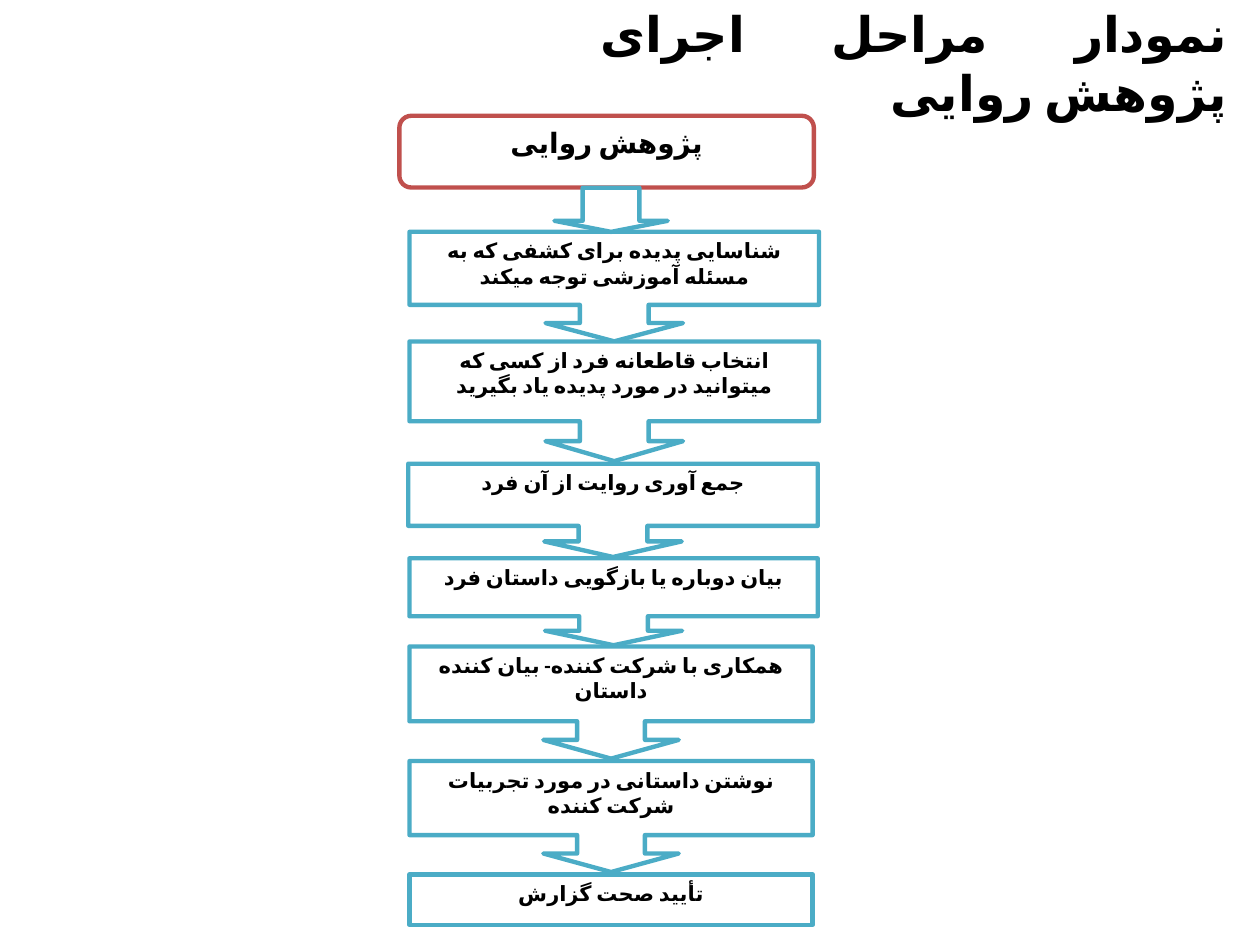
from dataclasses import dataclass

from pptx import Presentation
from pptx.dml.color import RGBColor
from pptx.enum.shapes import MSO_SHAPE
from pptx.enum.text import MSO_ANCHOR, MSO_AUTO_SIZE, PP_ALIGN
from pptx.oxml.ns import qn
from pptx.util import Pt
from lxml.etree import SubElement


@dataclass(frozen=True)
class Theme:
    ink: RGBColor = RGBColor(0, 0, 0)
    paper: RGBColor = RGBColor(255, 255, 255)
    red: RGBColor = RGBColor(0xC0, 0x50, 0x4D)
    blue: RGBColor = RGBColor(0x4B, 0xAC, 0xC6)
    serif: str = "Times New Roman"
    sans: str = "Calibri"
    title: float = 28
    head: float = 16
    body: float = 12
    line: float = 2.5
    after: float = 10


THEME = Theme()


@dataclass(frozen=True)
class Box:
    left: float
    top: float
    width: float
    height: float


@dataclass(frozen=True)
class Step:
    text: str
    box: Box
    font: str = THEME.serif
    rtl: bool = False


STEPS = [
    Step("شناسایی پدیده برای کشفی که به مسئله آموزشی توجه میکند",
         Box(234, 132.5, 234, 62.6), rtl=True),
    Step("انتخاب قاطعانه فرد از کسی که میتوانید در مورد پدیده یاد بگیرید",
         Box(234, 195.1, 234, 68.4)),
    Step("جمع آوری روایت از آن فرد",
         Box(233.3, 265, 234, 53.3), font=THEME.sans),
    Step("بیان دوباره یا بازگویی داستان فرد",
         Box(234, 319, 233.3, 49.7)),
    Step("همکاری با شرکت کننده- بیان کننده داستان",
         Box(234, 369.4, 230.4, 64.1)),
    Step("نوشتن داستانی در مورد تجربیات شرکت کننده",
         Box(234, 434.9, 230.4, 63.4), rtl=True),
    Step("تأیید صحت گزارش",
         Box(234, 499.7, 230.4, 28.8)),
]


def place(shape, box: Box) -> None:
    shape.left, shape.top = Pt(box.left), Pt(box.top)
    shape.width, shape.height = Pt(box.width), Pt(box.height)


def write(shape, text: str, *, size: float, font: str = THEME.serif,
          align=PP_ALIGN.CENTER, anchor=MSO_ANCHOR.TOP,
          after: float = THEME.after, rtl: bool = False) -> None:
    frame = shape.text_frame
    frame.word_wrap = True
    frame.auto_size = MSO_AUTO_SIZE.NONE
    frame.vertical_anchor = anchor
    para = frame.paragraphs[0]
    para.alignment = align
    para.space_after = Pt(after)
    if rtl:
        para._p.get_or_add_pPr().set("rtl", "1")
    run = para.add_run()
    run.text = text
    run.font.size = Pt(size)
    run.font.bold = True
    run.font.name = font
    run.font.color.rgb = THEME.ink
    props = run._r.get_or_add_rPr()
    props.set("lang", "fa-IR")
    SubElement(props, qn("a:cs")).set("typeface", THEME.sans)


def draw(slide, kind, box: Box, color: RGBColor = THEME.blue):
    shape = slide.shapes.add_shape(kind, 0, 0, 0, 0)
    place(shape, box)
    shape.shadow.inherit = False
    shape.fill.solid()
    shape.fill.fore_color.rgb = THEME.paper
    shape.line.color.rgb = color
    shape.line.width = Pt(THEME.line)
    return shape


def draw_step(slide, step: Step, last: bool) -> None:
    kind = MSO_SHAPE.RECTANGLE if last else MSO_SHAPE.DOWN_ARROW_CALLOUT
    shape = draw(slide, kind, step.box)
    if not last:
        neck = 0.168 * step.box.width / step.box.height
        for spot, value in enumerate((neck, neck, 0.167, 0.667)):
            shape.adjustments[spot] = value
    write(shape, step.text, size=THEME.body, font=step.font, rtl=step.rtl)


def main() -> None:
    deck = Presentation()
    deck.slide_width, deck.slide_height = Pt(720), Pt(540)
    slide = deck.slides.add_slide(deck.slide_layouts[5])

    title = slide.shapes.title
    place(title, Box(336.2, 15.1, 372.2, 41))
    write(title, "نمودار مراحل اجرای پژوهش روایی", size=THEME.title,
          align=PP_ALIGN.JUSTIFY, anchor=MSO_ANCHOR.MIDDLE, after=0, rtl=True)

    head = draw(slide, MSO_SHAPE.ROUNDED_RECTANGLE,
                Box(228.2, 66.2, 236.9, 41), THEME.red)
    write(head, "پژوهش روایی", size=THEME.head, font=THEME.sans)

    for step in STEPS:
        draw_step(slide, step, step is STEPS[-1])

    arrow = draw(slide, MSO_SHAPE.DOWN_ARROW, Box(316.8, 107.3, 64.8, 25.2))
    arrow.adjustments[0], arrow.adjustments[1] = 0.5, 0.25

    deck.save("out.pptx")


if __name__ == "__main__":
    main()
